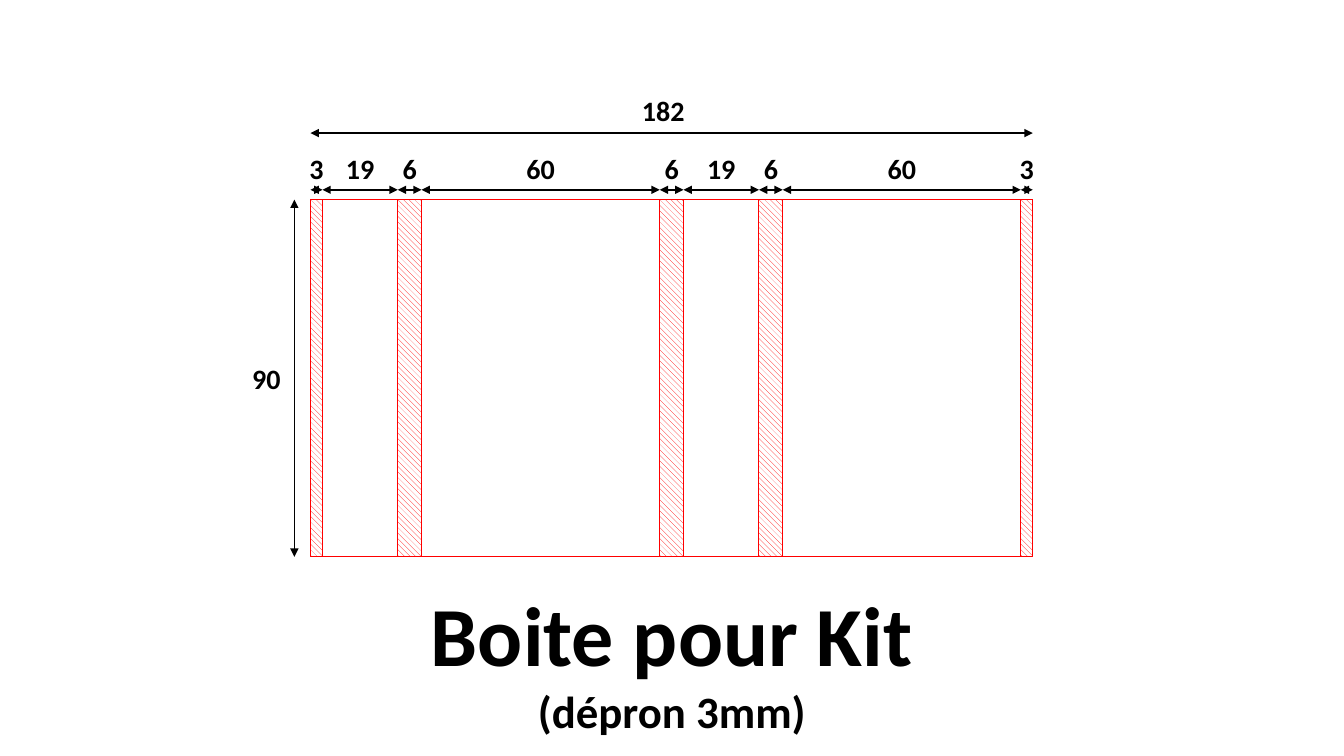
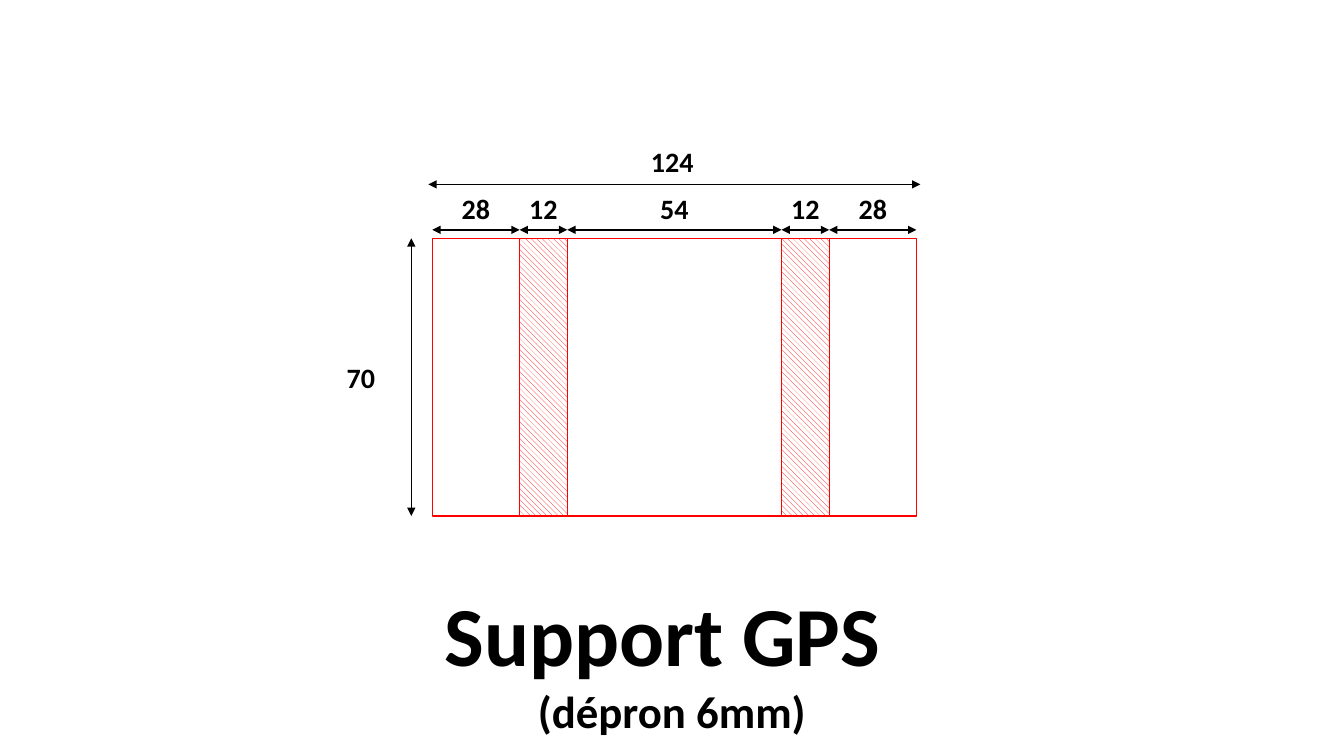
"""Build two slides of dimensioned cutting plans for foam-board parts."""
from dataclasses import dataclass

from pptx import Presentation
from pptx.dml.color import RGBColor
from pptx.enum import dml, shapes, text
from pptx.oxml import ns, xmlchemy
from pptx.util import Pt


@dataclass(frozen=True)
class Theme:
    ink: RGBColor = RGBColor(0, 0, 0)
    cut: RGBColor = RGBColor(255, 0, 0)
    paper: RGBColor = RGBColor(255, 255, 255)
    font: str = "Calibri"
    title_size: int = 60
    subtitle_size: int = 32
    label_size: int = 20
    dimension_width: int = 1


THEME = Theme()
POINTS_PER_MM = 72 / 25.4
LABEL_HEIGHT = 31.5

PLANS = [
    {
        "title": ["Boite pour Kit", "(dépron 3mm)"],
        "left": 221.8, "top": 142.6, "height": 90, "total": 182, "framed": True,
        "panels": [(3, 3, True), (19, 19, False), (6, 6, True), (60, 60, False), (6, 6, True),
                   (19, 19, False), (6, 6, True), (60, 60, False), (3, 3, True)],
        "panel_gap": 7, "total_gap": 47.5, "total_shift": -6, "side_gap": 11.5, "side_label": 20,
    },
    {
        "title": ["Support GPS ", "(dépron 6mm)"],
        "left": 308.8, "top": 170.2, "height": 70, "total": 124, "framed": False,
        "panels": [(28, 22, False), (12, 12, True), (54, 54, False), (12, 12, True), (28, 22, False)],
        "panel_gap": 6, "total_gap": 38.5, "total_shift": -1.5, "side_gap": 15, "side_label": 36,
    },
]


def add_panel(slide, left, top, width, height, folded):
    panel = slide.shapes.add_shape(shapes.MSO_SHAPE.RECTANGLE, Pt(left), Pt(top), Pt(width), Pt(height))
    panel.shadow.inherit = False
    panel.line.color.rgb = THEME.cut
    panel.line.width = Pt(0)
    if folded:
        panel.fill.patterned()
        panel.fill.pattern = dml.MSO_PATTERN.WIDE_DOWNWARD_DIAGONAL
        panel.fill.fore_color.rgb = THEME.cut
        panel.fill.back_color.rgb = THEME.paper
    else:
        panel.fill.background()


def add_dimension(slide, start, end, value, label_center, label_top):
    arrow = slide.shapes.add_connector(shapes.MSO_CONNECTOR.STRAIGHT, *map(Pt, start + end))
    arrow.line.color.rgb = THEME.ink
    arrow.line.width = Pt(THEME.dimension_width)
    line = arrow.line._get_or_add_ln()
    for tag in ("a:headEnd", "a:tailEnd"):
        arrowhead = xmlchemy.OxmlElement(tag)
        arrowhead.set("type", "triangle")
        line.append(arrowhead)
    arrow.element.find(ns.qn("p:spPr")).append(xmlchemy.OxmlElement("a:effectLst"))

    width = 49 if value >= 100 else 40
    label = slide.shapes.add_textbox(Pt(label_center - width / 2), Pt(label_top), Pt(width), Pt(LABEL_HEIGHT))
    label.text_frame.word_wrap = True
    label.text_frame.text = str(value)
    paragraph = label.text_frame.paragraphs[0]
    paragraph.alignment = text.PP_ALIGN.CENTER
    font = paragraph.runs[0].font
    font.name, font.size, font.bold = THEME.font, Pt(THEME.label_size), True
    font.color.rgb = THEME.ink


presentation = Presentation()
presentation.slide_width, presentation.slide_height = Pt(960), Pt(540)

for plan in PLANS:
    slide = presentation.slides.add_slide(presentation.slide_layouts[5])
    title = slide.shapes.title
    title.left, title.top, title.width, title.height = Pt(273.6), Pt(412.6), Pt(412.8), Pt(118.8)
    frame = title.text_frame
    frame.text = "\n".join(plan["title"])
    frame.word_wrap = True
    frame.auto_size = text.MSO_AUTO_SIZE.NONE
    frame.vertical_anchor = text.MSO_ANCHOR.TOP
    for paragraph, size in zip(frame.paragraphs, (THEME.title_size, THEME.subtitle_size)):
        paragraph.alignment = text.PP_ALIGN.CENTER
        paragraph.line_spacing = 1.0
        paragraph.space_before = Pt(0)
        font = paragraph.runs[0].font
        font.name, font.size, font.bold = THEME.font, Pt(size), True
        font.color.rgb = THEME.ink

    left, top = plan["left"], plan["top"]
    height = plan["height"] * POINTS_PER_MM
    board_width = sum(drawn for _, drawn, _ in plan["panels"]) * POINTS_PER_MM
    if plan["framed"]:
        add_panel(slide, left, top, board_width, height, False)

    panel_left = left
    arrow_y = top - plan["panel_gap"]
    for value, drawn, folded in plan["panels"]:
        width = drawn * POINTS_PER_MM
        add_panel(slide, panel_left, top, width, height, folded)
        add_dimension(slide, (panel_left, arrow_y), (panel_left + width, arrow_y), value,
                      panel_left + width / 2, arrow_y - LABEL_HEIGHT + 0.5)
        panel_left += width

    center = left + board_width / 2
    half_total = plan["total"] * POINTS_PER_MM / 2
    total_y = top - plan["total_gap"]
    add_dimension(slide, (center - half_total, total_y), (center + half_total, total_y), plan["total"],
                  center + plan["total_shift"], total_y - LABEL_HEIGHT - 0.5)

    side_x = left - plan["side_gap"]
    add_dimension(slide, (side_x, top), (side_x, top + height), plan["height"],
                  side_x - plan["side_label"], top + (height - LABEL_HEIGHT) / 2)

presentation.save("out.pptx")
